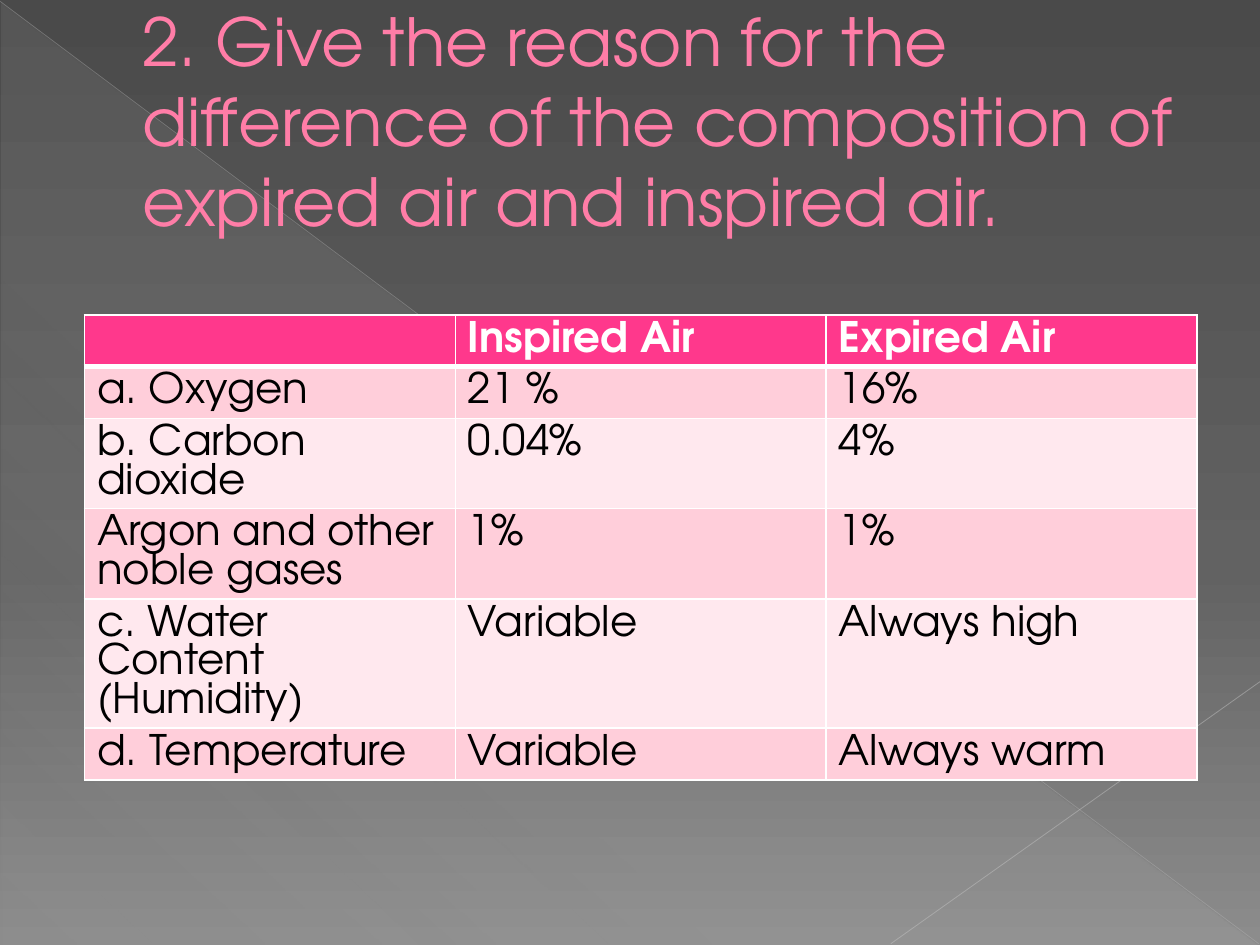
from dataclasses import dataclass

from lxml import etree
from pptx import Presentation
from pptx import util as u
from pptx.dml.color import RGBColor
from pptx.enum import shapes, text
from pptx.oxml.ns import qn


@dataclass(frozen=True)
class Theme:
    font: str = "TeX Gyre Adventor"
    title_size: float = 37.8
    title_pitch: float = 45.7
    table_size: float = 24
    table_pitch: float = 22.2
    title: str = "FF7DA7"
    header: str = "FF388C"
    bands: tuple = ("FFCEDA", "FFE8EE")
    header_text: str = "FFFFFF"
    body_text: str = "000000"
    border: str = "FFFFFF"
    backdrop: tuple = ((0, "4A4A4A", 100), (60, "626262", 100), (100, "8C8C8C", 100))
    facet: tuple = ((0, "D2D2D2", 10), (70, "D2D2D2", 8), (100, "D2D2D2", 1))


def add_color(parent, color, opacity=100):
    """Append an RGB colour, with its opacity in percent, to an XML element."""
    rgb = etree.SubElement(parent, qn("a:srgbClr"), val=color)
    if opacity < 100:
        etree.SubElement(rgb, qn("a:alpha"), val=str(opacity * 1000))


def paint_gradient(fill, element, stops, angle):
    """Fill with (position, colour, opacity) stops; the angle runs clockwise."""
    fill.gradient()
    fill.gradient_angle = 360 - angle
    stop_list = element.find(".//" + qn("a:gsLst"))
    for old_stop in list(stop_list):
        stop_list.remove(old_stop)
    for position, color, opacity in stops:
        stop = etree.SubElement(stop_list, qn("a:gs"), pos=str(position * 1000))
        add_color(stop, color, opacity)


theme = Theme()
deck = Presentation()
deck.slide_width, deck.slide_height = u.Inches(10), u.Inches(7.5)
page = deck.slides.add_slide(deck.slide_layouts[5])
paint_gradient(page.background.fill, page._element, theme.backdrop, 90)

# Backdrop facet and its crossing lines
facet = page.shapes.add_shape(
    shapes.MSO_SHAPE.RIGHT_TRIANGLE,
    u.Inches(0.01), u.Inches(0.02), u.Inches(9.98), u.Inches(7.48))
facet.shadow.inherit = False
facet.line.fill.background()
paint_gradient(facet.fill, facet._element, theme.facet, 133)

for ends, color, width, opacity in (
    ((0, 0.01, 9.99, 7.49), "BFBFBF", 0.39, 35),
    ((10, 5.41, 7.07, 7.49), "C6C6C6", 0.47, 45),
):
    line = page.shapes.add_connector(
        shapes.MSO_CONNECTOR.STRAIGHT, *(u.Inches(value) for value in ends))
    line.line.width = u.Pt(width)
    line.line.color.rgb = RGBColor.from_string(color)
    rgb = line._element.spPr.find(".//" + qn("a:srgbClr"))
    etree.SubElement(rgb, qn("a:alpha"), val=str(opacity * 1000))
    etree.SubElement(line._element.spPr, qn("a:effectLst"))

# Title, brought in front of the backdrop
title = page.shapes.title
title._element.getparent().append(title._element)
title.left, title.top = u.Inches(0.5), u.Inches(0.5)
title.width, title.height = u.Inches(9), u.Inches(1.53)
frame = title.text_frame
frame.text = ("2. Give the reason for the difference of the composition of "
              "expired air and inspired air. \v")
frame.word_wrap = True
frame.auto_size = text.MSO_AUTO_SIZE.NONE
frame.vertical_anchor = text.MSO_ANCHOR.MIDDLE
para = frame.paragraphs[0]
para.alignment = text.PP_ALIGN.LEFT
para.line_spacing = u.Pt(theme.title_pitch)
para.font.name = theme.font
para.font.size = u.Pt(theme.title_size)
para.font.color.rgb = RGBColor.from_string(theme.title)
para._p.get_or_add_pPr().set("marL", str(u.Inches(0.53)))
para._p.get_or_add_pPr().set("indent", "0")

# Air composition table
air_rows = (
    ("", "Inspired Air", "Expired Air"),
    ("a. Oxygen", "21 %", "16%"),
    ("b. Carbon dioxide", "0.04%", "4%"),
    ("Argon and other noble gases", "1%", "1%"),
    ("c. Water Content (Humidity)", "Variable", "Always high"),
    ("d. Temperature", "Variable", "Always warm"),
)
row_height = u.Inches(0.41)
table = page.shapes.add_table(
    len(air_rows), 3, u.Inches(0.67), u.Inches(2.5),
    u.Inches(8.83), row_height * len(air_rows)).table

for row, values in enumerate(air_rows):
    is_header = row == 0
    table.rows[row].height = row_height
    for column, value in enumerate(values):
        cell = table.cell(row, column)
        cell.text = value
        para = cell.text_frame.paragraphs[0]
        para.line_spacing = u.Pt(theme.table_pitch)
        para.font.name = theme.font
        para.font.size = u.Pt(theme.table_size)
        para.font.bold = is_header
        para.font.color.rgb = RGBColor.from_string(
            theme.header_text if is_header else theme.body_text)
        properties = cell._tc.get_or_add_tcPr()
        for side in ("lnL", "lnR", "lnT", "lnB"):
            thick = (row, side) in ((0, "lnB"), (1, "lnT"))
            border = etree.SubElement(
                properties, qn("a:" + side), w=str(u.Pt(3 if thick else 1)))
            add_color(etree.SubElement(border, qn("a:solidFill")), theme.border)
        cell.fill.solid()
        cell.fill.fore_color.rgb = RGBColor.from_string(
            theme.header if is_header else theme.bands[(row - 1) % 2])

deck.save("out.pptx")
